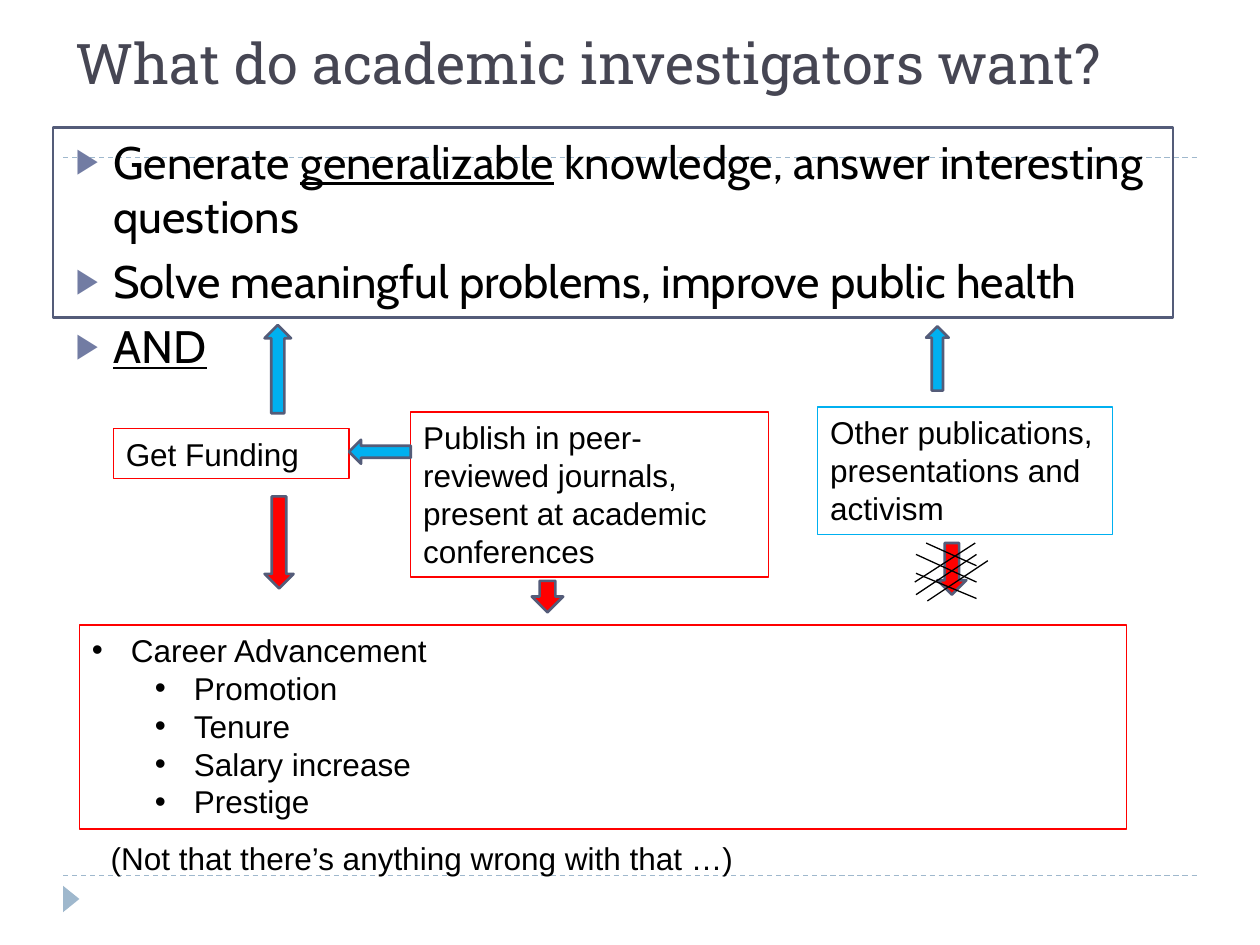
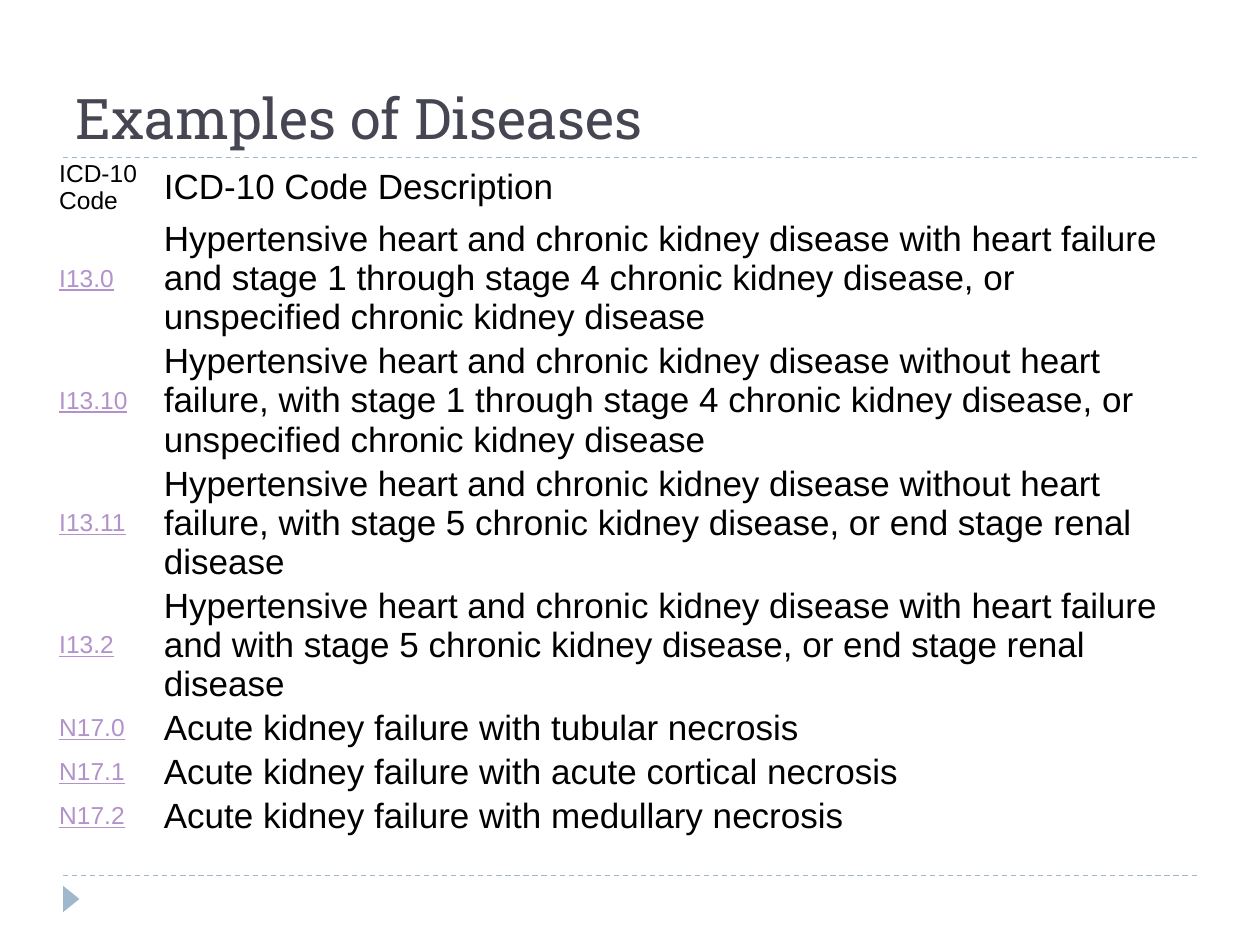
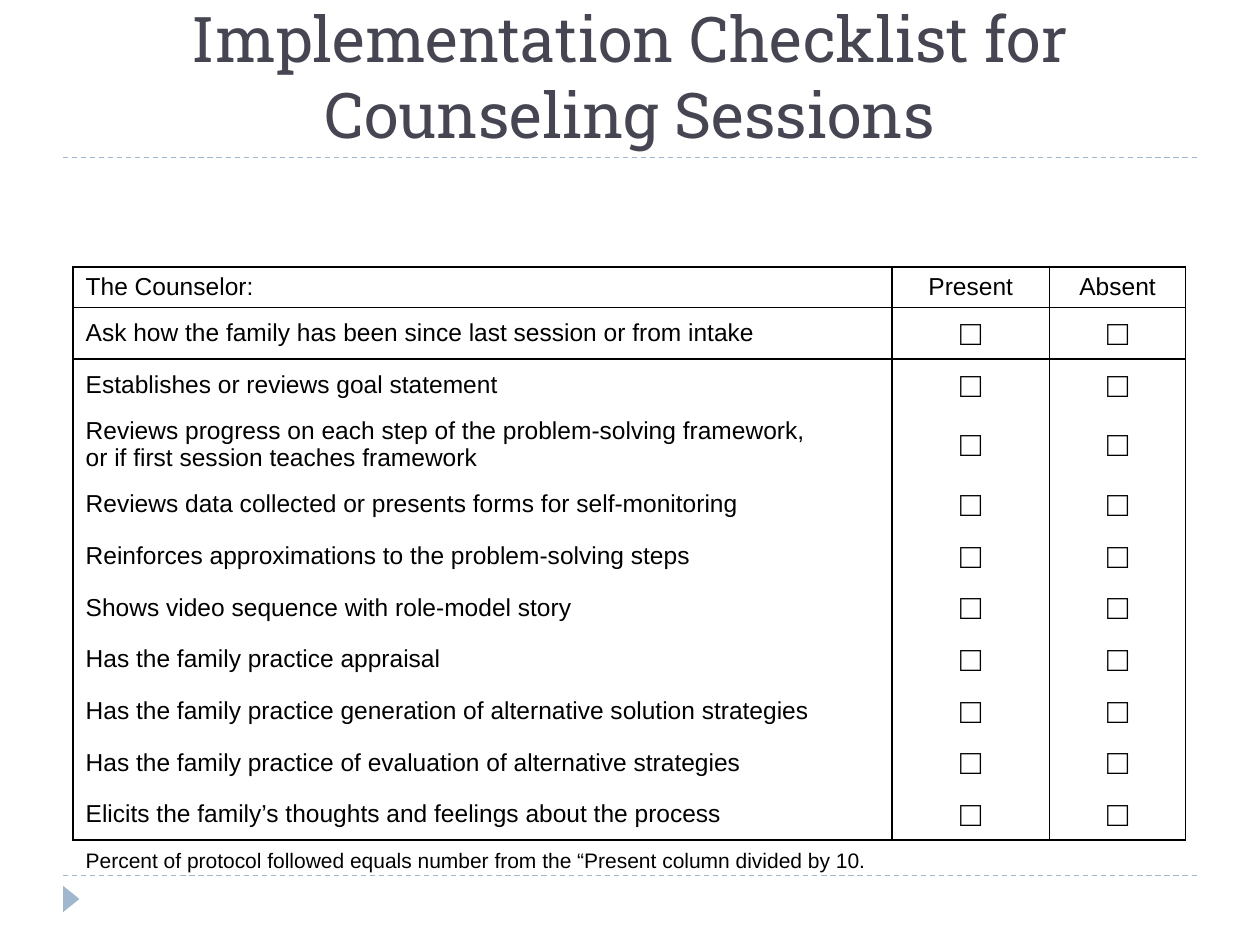
from lxml.etree import SubElement
from pptx import Presentation
from pptx.dml.color import RGBColor
from pptx.enum.dml import MSO_LINE
from pptx.enum.shapes import MSO_CONNECTOR, MSO_SHAPE
from pptx.enum.text import MSO_ANCHOR, MSO_AUTO_SIZE, PP_ALIGN
from pptx.oxml.ns import qn
from pptx.util import Inches, Pt

BLACK = RGBColor(0x00, 0x00, 0x00)
TITLE_GREY = RGBColor(0x46, 0x46, 0x53)
PALE_BLUE = RGBColor(0x9F, 0xB8, 0xCD)
BULLET_BLUE = RGBColor(0x72, 0x7C, 0xA3)
SLATE = RGBColor(0x54, 0x5C, 0x79)
SKY = RGBColor(0x00, 0xB0, 0xF0)
RED = RGBColor(0xFF, 0x00, 0x00)
LINK_LILAC = RGBColor(0xB2, 0x92, 0xCA)

TITLE_FONT, BODY_FONT, TEXT_FONT = "Roboto Slab", "Cabin", "Arial"
NO_STYLE_TABLE = "{2D5ABB26-0587-4C30-8999-92F81FD0307C}"
RULE_TOPS = (6.95, 1.25)

# Slide 1: each goal is a list of (text, underlined)
GOALS = [
    [("Generate ", False), ("generalizable", True),
     (" knowledge, answer interesting questions", False)],
    [("Solve meaningful problems, improve public health", False)],
    [("AND", True)],
]
GOALS_FRAME = (0.42, 1.01, 8.89, 1.51)
ASIDE = ("(Not that there’s anything wrong with that …)", (0.78, 6.61, 7.37, 0.4))
ACTIVITIES = [
    ("Get Funding", (0.9, 3.4, 1.87, 0.4), RED),
    ("Publish in peer-reviewed journals, present at academic conferences",
     (3.26, 3.27, 2.84, 1.31), RED),
    ("Other publications, presentations and activism",
     (6.49, 3.23, 2.34, 1.01), SKY),
]
CAREER_BOX = (0.63, 4.96, 8.31, 1.62)
CAREER = [("Career Advancement", 0), ("Promotion", 1), ("Tenure", 1),
          ("Salary increase", 1), ("Prestige", 1)]
ARROWS = [
    (MSO_SHAPE.UP_ARROW, (7.35, 2.59, 0.18, 0.51), SKY),
    (MSO_SHAPE.UP_ARROW, (2.1, 2.58, 0.21, 0.7), SKY),
    (MSO_SHAPE.LEFT_ARROW, (2.77, 3.49, 0.49, 0.19), SKY),
    (MSO_SHAPE.DOWN_ARROW, (2.1, 3.94, 0.23, 0.73), RED),
    (MSO_SHAPE.DOWN_ARROW, (4.22, 4.61, 0.25, 0.25), RED),
    (MSO_SHAPE.DOWN_ARROW, (7.44, 4.31, 0.23, 0.41), RED),
]
CROSS_OUT = [
    (7.35, 4.31, 7.75, 4.49), (7.27, 4.4, 7.75, 4.62), (7.27, 4.55, 7.75, 4.75),
    (7.27, 4.72, 7.75, 4.4), (7.26, 4.62, 7.74, 4.31), (7.36, 4.77, 7.84, 4.45),
]

# Slide 2
DISEASE_HEADER = ("ICD-10 Code", "ICD-10 Code Description")
DISEASES = [
    ("I13.0", "Hypertensive heart and chronic kidney disease with heart failure and stage 1 "
              "through stage 4 chronic kidney disease, or unspecified chronic kidney disease"),
    ("I13.10", "Hypertensive heart and chronic kidney disease without heart failure, with stage 1 "
               "through stage 4 chronic kidney disease, or unspecified chronic kidney disease"),
    ("I13.11", "Hypertensive heart and chronic kidney disease without heart failure, "
               "with stage 5 chronic kidney disease, or end stage renal disease"),
    ("I13.2", "Hypertensive heart and chronic kidney disease with heart failure and "
              "with stage 5 chronic kidney disease, or end stage renal disease"),
    ("N17.0", "Acute kidney failure with tubular necrosis"),
    ("N17.1", "Acute kidney failure with acute cortical necrosis"),
    ("N17.2", "Acute kidney failure with medullary necrosis"),
]
DISEASE_ROWS = [0.19] + [0.63] * 4 + [0.19, 0.34, 0.34]

# Slide 3
CHECKLIST_HEADER = ("The Counselor:", "Present", "Absent")
CHECKLIST = [
    "Ask how the family has been since last session or from intake",
    "Establishes or reviews goal statement",
    "Reviews progress on each step of the problem-solving framework, \n"
    "or if first session teaches framework",
    "Reviews data collected or presents forms for self-monitoring",
    "Reinforces approximations to the problem-solving steps",
    "Shows video sequence with role-model story",
    "Has the family practice appraisal",
    "Has the family practice generation of alternative solution strategies",
    "Has the family practice of evaluation of alternative strategies",
    "Elicits the family’s thoughts and feelings about the process",
]
SCORING_NOTE = "Percent of protocol followed equals number from the “Present column divided by 10."
CHECKLIST_ROWS = [0.31, 0.4, 0.4, 0.53] + [0.4] * 7 + [0.33]


def place(shape, area):
    shape.left, shape.top, shape.width, shape.height = map(Inches, area)


def add_span(para, text, size, font=TEXT_FONT, color=BLACK, underline=None):
    span = para.add_run()
    span.text = text
    span.font.size = Pt(size)
    span.font.name = font
    span.font.color.rgb = color
    span.font.underline = underline


def add_bullet(para, char, left, hanging, color=BLACK, percent=100):
    props = para._p.get_or_add_pPr()
    props.set("marL", str(Inches(left)))
    props.set("indent", str(-Inches(hanging)))
    tint = SubElement(props, qn("a:buClr"))
    SubElement(tint, qn("a:srgbClr"), val=str(color))
    SubElement(props, qn("a:buSzPct"), val=str(percent * 1000))
    SubElement(props, qn("a:buFont"), typeface=TEXT_FONT)
    SubElement(props, qn("a:buChar"), char=char)


def add_line(slide, ends, color):
    line = slide.shapes.add_connector(MSO_CONNECTOR.STRAIGHT, *map(Inches, ends))
    line.line.color.rgb = color
    line.line.width = Pt(0.75)
    SubElement(line.element.spPr, qn("a:effectLst"))
    return line


def add_figure(slide, kind, area, fill=None, outline=None):
    figure = slide.shapes.add_shape(kind, *map(Inches, area))
    figure.shadow.inherit = False
    if fill is None:
        figure.fill.background()
    else:
        figure.fill.solid()
        figure.fill.fore_color.rgb = fill
    if outline is None:
        figure.line.fill.background()
    else:
        figure.line.color.rgb = outline
        figure.line.width = Pt(1.5)
    return figure


def add_text_box(slide, area, outline=None):
    box = slide.shapes.add_textbox(*map(Inches, area))
    box.text_frame.word_wrap = True
    if outline is not None:
        box.line.color.rgb = outline
        box.line.width = Pt(0.75)
    return box


def add_master_marks(deck, slide):
    """Draw the dashed rules and corner triangle, then move them to the master."""
    marks = []
    for top in RULE_TOPS:
        rule = add_line(slide, (0.5, top, 9.5, top), PALE_BLUE)
        rule.line.dash_style = MSO_LINE.DASH
        marks.append(rule)
    triangle = add_figure(slide, MSO_SHAPE.ISOSCELES_TRIANGLE, (0.46, 7.07, 0.21, 0.13), PALE_BLUE)
    triangle.rotation = 90
    marks.append(triangle)
    for number, mark in enumerate(marks, start=101):
        mark.element.xpath(".//p:cNvPr")[0].set("id", str(number))
        deck.slide_master.shapes.element.append(mark.element)


def add_titled_slide(deck, layout, text, top=0.17, size=32, align=PP_ALIGN.LEFT):
    slide = deck.slides.add_slide(deck.slide_layouts.get_by_name(layout))
    title = slide.shapes.title
    place(title, (0.5, top, 9, 1.08))
    frame = title.text_frame
    frame.vertical_anchor = MSO_ANCHOR.BOTTOM
    frame.auto_size = MSO_AUTO_SIZE.NONE
    para = frame.paragraphs[0]
    para.alignment = align
    add_span(para, text, size, TITLE_FONT, TITLE_GREY)
    return slide


def add_plain_table(slide, area, columns, rows):
    frame = slide.shapes.add_table(len(rows), len(columns), *map(Inches, area))
    table = frame.table
    table.first_row = table.horz_banding = False
    frame.element.find(".//" + qn("a:tableStyleId")).text = NO_STYLE_TABLE
    for column, width in zip(table.columns, columns):
        column.width = Inches(width)
    for row, height in zip(table.rows, rows):
        row.height = Inches(height)
    for cell in table.iter_cells():
        cell.fill.background()
        cell.vertical_anchor = MSO_ANCHOR.MIDDLE
    return table


def fill_cell(cell, text, size, align=PP_ALIGN.LEFT, **style):
    para = cell.text_frame.paragraphs[0]
    para.alignment = align
    for number, line in enumerate(text.split("\n")):
        if number:
            para.add_line_break()
        add_span(para, line, size, **style)


def set_borders(cell, sides):
    """Draw 1 pt black lines on the given sides, named by L, R, T and B."""
    props = cell._tc.get_or_add_tcPr()
    for position, side in enumerate(side for side in "LRTB" if side in sides):
        border = SubElement(props, qn(f"a:ln{side}"), w=str(Pt(1)))
        fill = SubElement(border, qn("a:solidFill"))
        SubElement(fill, qn("a:srgbClr"), val=str(BLACK))
        props.insert(position, border)


def build_investigators(deck):
    slide = add_titled_slide(deck, "Title and Content", "What do academic investigators want?", top=-0.27)
    add_master_marks(deck, slide)
    body = slide.placeholders[1]
    place(body, (0.5, 1.01, 9, 2.55))
    frame = body.text_frame
    frame.auto_size = MSO_AUTO_SIZE.NONE
    for number, goal in enumerate(GOALS):
        para = frame.add_paragraph() if number else frame.paragraphs[0]
        para.space_before = Pt(6)
        add_bullet(para, "▶", 0.3, 0.3, BULLET_BLUE, 76)
        for text, underline in goal:
            add_span(para, text, 26, BODY_FONT, underline=underline)

    for text, area, outline in [(*ASIDE, None), *ACTIVITIES]:
        box = add_text_box(slide, area, outline)
        add_span(box.text_frame.paragraphs[0], text, 18)
    add_figure(slide, MSO_SHAPE.RECTANGLE, GOALS_FRAME, outline=SLATE)

    frame = add_text_box(slide, CAREER_BOX, RED).text_frame
    for number, (text, level) in enumerate(CAREER):
        para = frame.add_paragraph() if number else frame.paragraphs[0]
        para.level = level
        add_bullet(para, "•", 0.31 + 0.5 * level, 0.31)
        add_span(para, text, 18)

    for kind, area, fill in ARROWS:
        add_figure(slide, kind, area, fill, SLATE)
    for ends in CROSS_OUT:
        add_line(slide, ends, BLACK)


def build_diseases(deck):
    slide = add_titled_slide(deck, "Title Only", "Examples of Diseases")
    table = add_plain_table(slide, (0.42, 1.25, 9, 5.17), (0.83, 8.17), DISEASE_ROWS)
    for cell in table.iter_cells():
        cell.margin_left = cell.margin_right = Inches(0.05)
        cell.margin_top = cell.margin_bottom = Inches(0.02)
    for row, (code, description) in enumerate([DISEASE_HEADER, *DISEASES]):
        link = {"color": LINK_LILAC, "underline": True} if row else {}
        fill_cell(table.cell(row, 0), code, 14, **link)
        fill_cell(table.cell(row, 1), description, 20)


def build_checklist(deck):
    slide = add_titled_slide(deck, "Title Only", "Implementation Checklist for Counseling Sessions",
                             size=36, align=PP_ALIGN.CENTER)
    table = add_plain_table(slide, (0.58, 2.12, 8.83, 5.13), (6.5, 1.25, 1.08), CHECKLIST_ROWS)
    rows = [CHECKLIST_HEADER] + [(item, "□", "□") for item in CHECKLIST]
    for row, texts in enumerate(rows):
        sides = {0: "LRTB", 1: "LRT", len(CHECKLIST): "LRB"}.get(row, "LR")
        for column, text in enumerate(texts):
            cell = table.cell(row, column)
            fill_cell(cell, text, 20 if text == "□" else 14,
                      PP_ALIGN.CENTER if column else PP_ALIGN.LEFT)
            set_borders(cell, sides)
    note = table.cell(len(rows), 0)
    note.merge(table.cell(len(rows), 2))
    fill_cell(note, SCORING_NOTE, 12)
    set_borders(note, "T")


def main():
    deck = Presentation()
    deck.slide_width, deck.slide_height = Inches(10), Inches(7.5)
    build_investigators(deck)
    build_diseases(deck)
    build_checklist(deck)
    deck.save("out.pptx")


if __name__ == "__main__":
    main()
